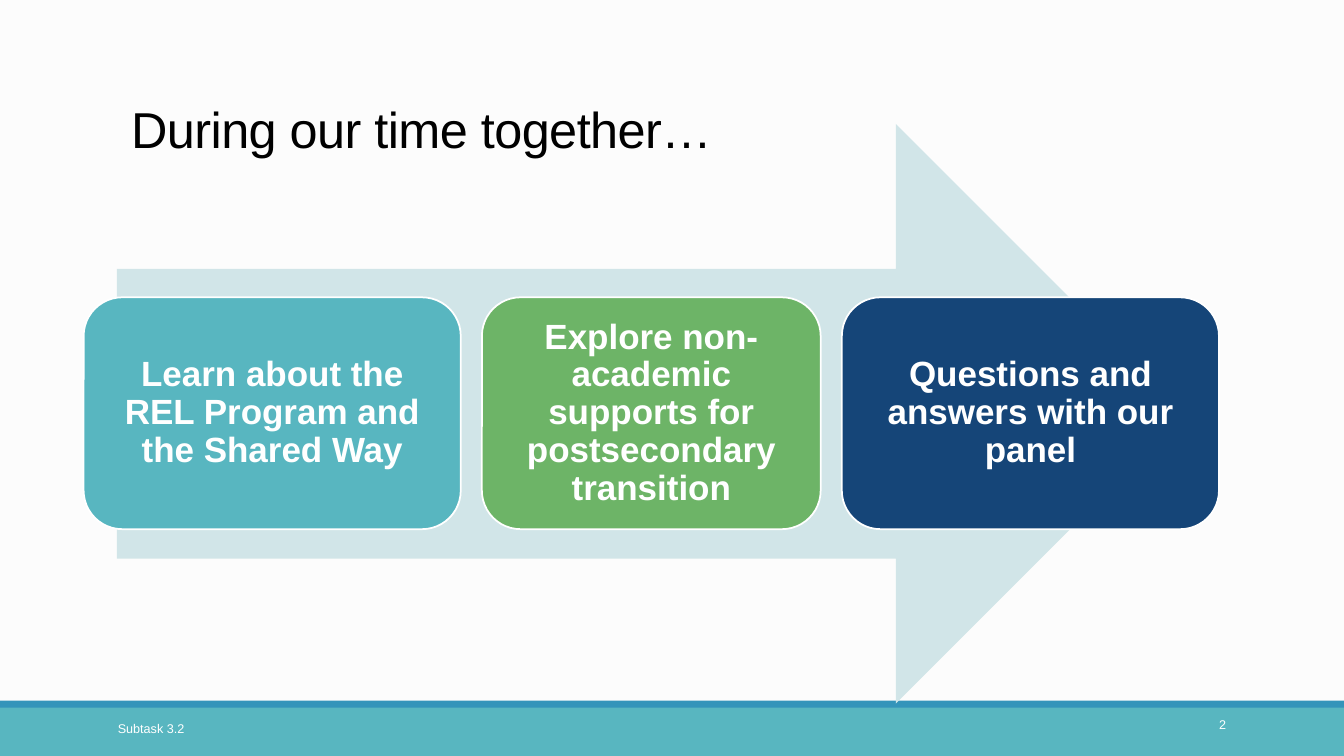
from pptx import Presentation
from pptx.dml.color import RGBColor
from pptx.enum.shapes import MSO_SHAPE
from pptx.enum.text import MSO_ANCHOR, MSO_AUTO_SIZE, PP_ALIGN
from pptx.util import Inches, Pt

COLORS = {
    "back": "FCFCFC", "teal": "58B6C0", "blue": "3494BA", "pale": "D1E5E8",
    "green": "6DB467", "navy": "154578", "white": "FFFFFF", "black": "000000",
}


def color(name):
    return RGBColor.from_string(COLORS[name])


def add_block(kind, box, fill):
    """Add a preset shape with a plain fill, no line and no shadow."""
    shape = slide.shapes.add_shape(kind, *map(Inches, box))
    shape.shadow.inherit = False
    shape.fill.solid()
    shape.fill.fore_color.rgb = color(fill)
    shape.line.fill.background()
    return shape


deck = Presentation()
deck.slide_width, deck.slide_height = Inches(13.33), Inches(7.5)
slide = deck.slides.add_slide(deck.slide_layouts[5])
slide.background.fill.solid()
slide.background.fill.fore_color.rgb = color("back")

# Footer bands
add_block(MSO_SHAPE.RECTANGLE, (0, 7, 13.33, 0.5), "teal")
add_block(MSO_SHAPE.RECTANGLE, (0, 6.95, 13.33, 0.07), "blue")

# Title
title = slide.shapes.title
title.left, title.top = Inches(1.2), Inches(0.39)
title.width, title.height = Inches(11), Inches(1.24)
frame = title.text_frame
frame.text = "During our time together…"
frame.auto_size = MSO_AUTO_SIZE.NONE
frame.vertical_anchor = MSO_ANCHOR.BOTTOM
para = frame.paragraphs[0]
para.alignment = PP_ALIGN.LEFT
para.line_spacing = 0.85
run = para.runs[0]
run.font.name, run.font.size = "Arial", Pt(36)
run.font.color.rgb = color("black")
run._r.get_or_add_rPr().set("spc", "-40")

# Arrow with the three agenda steps
add_block(MSO_SHAPE.RIGHT_ARROW, (1.16, 1.23, 10.6, 5.75), "pale")
steps = [
    ("Learn about the REL Program and the Shared Way", 3.74, "teal"),
    ("Explore non-academic supports for postsecondary transition", 3.36, "green"),
    ("Questions and answers with our panel", 3.74, "navy"),
]
left, gap = 0.83, 0.21
for text, width, fill in steps:
    card = add_block(MSO_SHAPE.ROUNDED_RECTANGLE, (left, 2.95, width, 2.3), fill)
    card.line.color.rgb = color("white")
    card.line.width = Pt(1.25)
    frame = card.text_frame
    frame.text = text
    frame.word_wrap = True
    frame.vertical_anchor = MSO_ANCHOR.MIDDLE
    frame.margin_left = frame.margin_right = Inches(0.1)
    frame.margin_top = frame.margin_bottom = Inches(0.1)
    para = frame.paragraphs[0]
    para.alignment = PP_ALIGN.CENTER
    para.line_spacing = 0.9
    font = para.runs[0].font
    font.name, font.size, font.bold = "Arial", Pt(25), True
    font.color.rgb = color("white")
    left += width + gap

# Footer texts
notes = [
    ("2", (10.83, 7.06, 1.43, 0.4), PP_ALIGN.RIGHT),
    ("Subtask 3.2", (1.07, 7.1, 2.7, 0.4), PP_ALIGN.LEFT),
]
for text, box, align in notes:
    frame = slide.shapes.add_textbox(*map(Inches, box)).text_frame
    frame.word_wrap = True
    frame.text = text
    para = frame.paragraphs[0]
    para.alignment = align
    font = para.runs[0].font
    font.name, font.size = "Arial", Pt(9)
    font.color.rgb = color("white")

deck.save("out.pptx")
